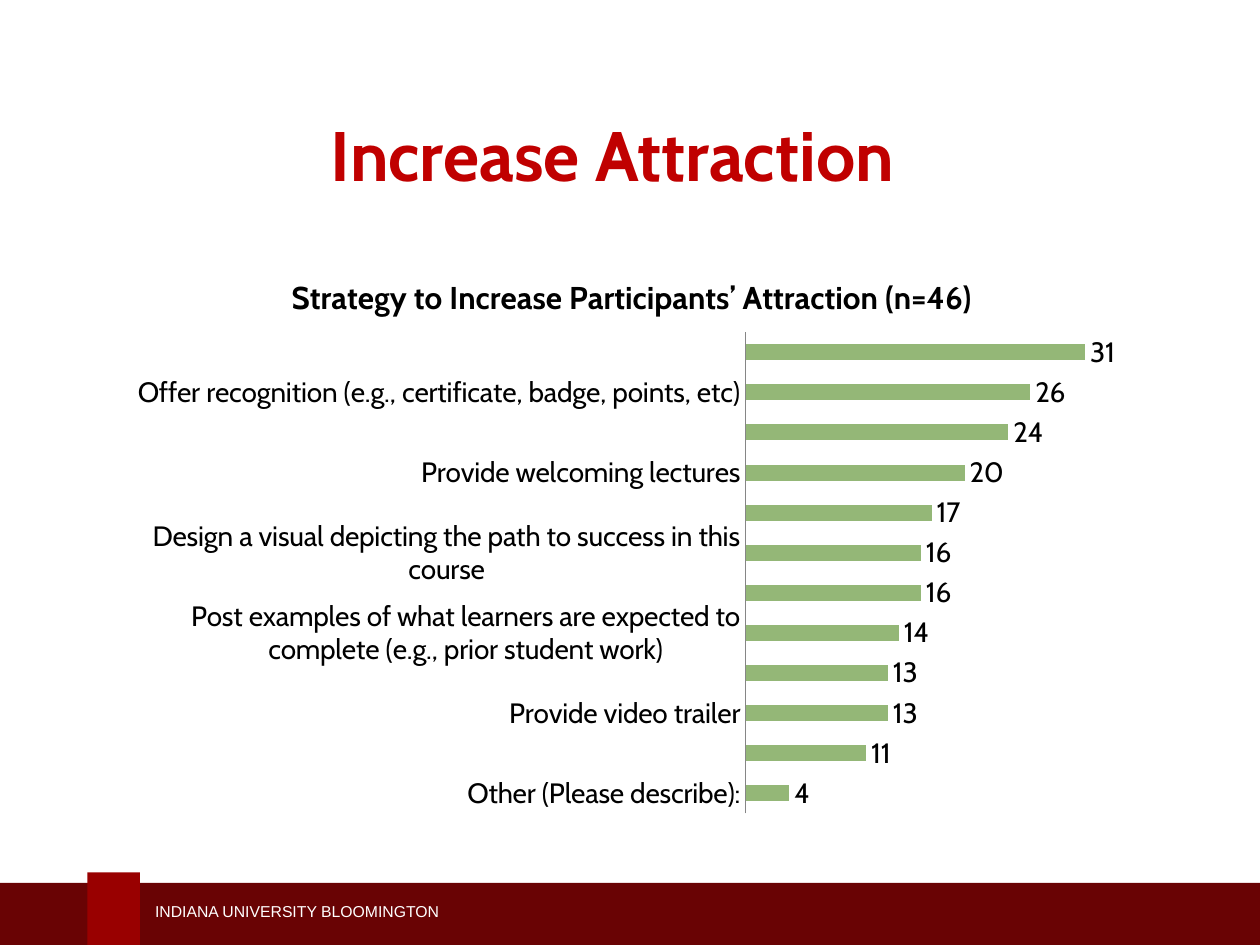
from lxml import etree
from pptx import Presentation
from pptx.chart.data import CategoryChartData
from pptx.dml.color import RGBColor
from pptx.enum.chart import XL_CHART_TYPE, XL_LABEL_POSITION, XL_TICK_MARK
from pptx.enum.shapes import MSO_SHAPE
from pptx.enum.text import MSO_ANCHOR, PP_ALIGN
from pptx.oxml.ns import qn
from pptx.util import Pt

BAR_CHART = XL_CHART_TYPE.BAR_CLUSTERED
OUTSIDE_END = XL_LABEL_POSITION.OUTSIDE_END
NO_TICKS = XL_TICK_MARK.NONE
RECTANGLE = MSO_SHAPE.RECTANGLE
MIDDLE = MSO_ANCHOR.MIDDLE
CENTER = PP_ALIGN.CENTER

COLORS = {
    "band": "690304",
    "tab": "990000",
    "title": "C00000",
    "bar": "94B777",
    "axis": "868686",
    "text": "000000",
    "white": "FFFFFF",
}
HEADING_FONT = "Cabin"
FOOTER_FONT = "Arial"

# Bars from the bottom up; every other bar has no label
STRATEGIES = [
    ("Other (Please describe):", 4),
    ("", 11),
    ("Provide video trailer", 13),
    ("", 13),
    ("Post examples of what learners are expected to complete "
     "(e.g., prior student work)", 14),
    ("", 16),
    ("Design a visual depicting the path to success in this course", 16),
    ("", 17),
    ("Provide welcoming lectures", 20),
    ("", 24),
    ("Offer recognition (e.g., certificate, badge, points, etc)", 26),
    ("", 31),
]


def color(name):
    return RGBColor.from_string(COLORS[name])


def style_font(font, name, size, color_name, bold=False):
    font.name = name
    font.size = Pt(size)
    font.bold = bold
    font.color.rgb = color(color_name)


def add_block(page, left, top, width, height, color_name):
    block = page.shapes.add_shape(RECTANGLE, Pt(left), Pt(top), Pt(width), Pt(height))
    block.shadow.inherit = False
    block.fill.solid()
    block.fill.fore_color.rgb = color(color_name)
    block.line.fill.background()


def add_footer(page, left, top, width, height):
    add_block(page, left, top, width, height, "band")
    add_block(page, left + 52, top - 6, 30, height + 6, "tab")
    box = page.shapes.add_textbox(Pt(left + 83.5), Pt(top + 7), Pt(284), Pt(18))
    frame = box.text_frame
    frame.word_wrap = True
    frame.vertical_anchor = MIDDLE
    frame.text = "INDIANA UNIVERSITY BLOOMINGTON"
    style_font(frame.paragraphs[0].runs[0].font, FOOTER_FONT, 9, "white")


def place_title(page, left, top, width, height):
    title = page.shapes.title
    title.left, title.top = Pt(left), Pt(top)
    title.width, title.height = Pt(width), Pt(height)
    frame = title.text_frame
    frame.text = "Increase Attraction"
    frame.vertical_anchor = MIDDLE
    paragraph = frame.paragraphs[0]
    paragraph.alignment = CENTER
    style_font(paragraph.runs[0].font, HEADING_FONT, 40, "title", bold=True)


def set_plot_layout(chart, **fractions):
    """Fix the inner plot area as fractions of the chart box."""
    plot_area = chart.plots[0]._element.getparent()
    layout = plot_area.find(qn("c:layout"))
    if layout is None:
        layout = etree.Element(qn("c:layout"))
        plot_area.insert(0, layout)
    manual = etree.SubElement(layout, qn("c:manualLayout"))
    settings = {"layoutTarget": "inner", "xMode": "edge", "yMode": "edge", **fractions}
    for name, value in settings.items():
        etree.SubElement(manual, qn(f"c:{name}")).set("val", str(value))


def add_strategy_chart(page, left, top, width, height):
    data = CategoryChartData()
    data.categories = [name for name, _ in STRATEGIES]
    data.add_series("Series 1", [count for _, count in STRATEGIES])
    chart = page.shapes.add_chart(
        BAR_CHART, Pt(left), Pt(top), Pt(width), Pt(height), data).chart
    style_font(chart.font, FOOTER_FONT, 10, "text")
    chart.has_legend = False

    # Heading
    chart.has_title = True
    heading = chart.chart_title
    heading.include_in_layout = False
    heading.text_frame.text = "Strategy to Increase Participants’ Attraction (n=46)"
    style_font(heading.text_frame.paragraphs[0].runs[0].font,
               HEADING_FONT, 18, "text", bold=True)

    # Axes
    categories = chart.category_axis
    categories.major_tick_mark = NO_TICKS
    categories.minor_tick_mark = NO_TICKS
    categories.format.line.color.rgb = color("axis")
    categories.format.line.width = Pt(0.75)
    style_font(categories.tick_labels.font, HEADING_FONT, 16, "text")
    values = chart.value_axis
    values.minimum_scale, values.maximum_scale = 0, 35
    values.has_major_gridlines = False
    values.visible = False

    # Bars and their values
    plot = chart.plots[0]
    plot.gap_width = 150
    plot.overlap = -25
    plot.vary_by_categories = False
    bars = plot.series[0]
    bars.format.fill.solid()
    bars.format.fill.fore_color.rgb = color("bar")
    plot.has_data_labels = True
    labels = plot.data_labels
    labels.show_value = True
    labels.position = OUTSIDE_END
    style_font(labels.font, HEADING_FONT, 16, "text")
    set_plot_layout(chart, x=0.61, y=0.14, w=0.37, h=0.84)


def main():
    deck = Presentation()
    deck.slide_width, deck.slide_height = Pt(720), Pt(540)
    page = deck.slides.add_slide(deck.slide_layouts[0])
    subtitle = page.placeholders[1].element
    subtitle.getparent().remove(subtitle)

    add_footer(page, -2, 504.5, 726, 36)
    place_title(page, 35, 62.5, 630, 50.5)
    add_strategy_chart(page, 65, 144, 592, 327.5)
    deck.save("out.pptx")


if __name__ == "__main__":
    main()
